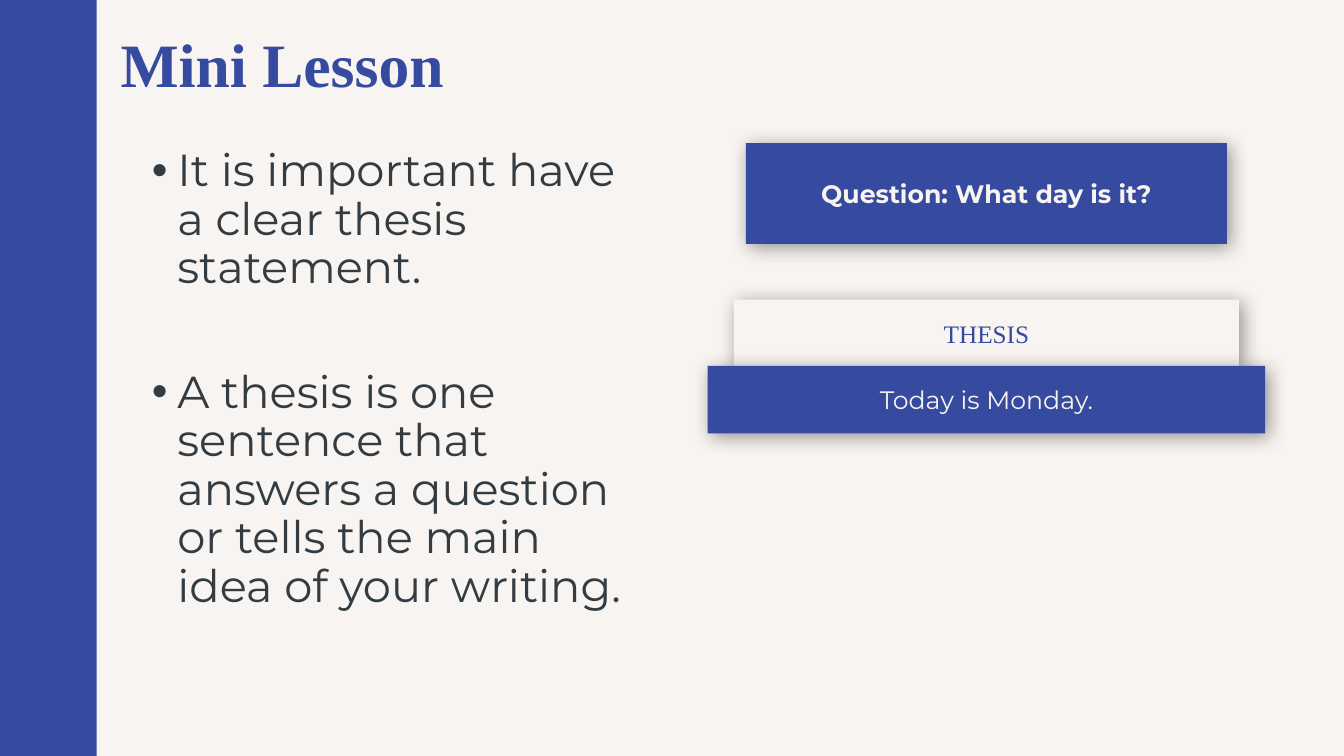
from dataclasses import dataclass

from lxml import etree
from pptx import Presentation
from pptx.dml.color import RGBColor
from pptx.enum.shapes import MSO_SHAPE
from pptx.enum.text import MSO_ANCHOR, PP_ALIGN
from pptx.oxml.ns import qn
from pptx.shapes.autoshape import Shape
from pptx.slide import Slide
from pptx.text.text import _Paragraph
from pptx.util import Cm, Pt

RECTANGLE = MSO_SHAPE.RECTANGLE
MIDDLE = MSO_ANCHOR.MIDDLE
CENTER = PP_ALIGN.CENTER

BLUE = "364B9F"
CREAM = "F7F4F1"
SLATE = "333C42"
SANS = "Montserrat"
SERIF = "Times New Roman"

SLIDE_WIDTH, SLIDE_HEIGHT = 33.87, 19.05
CARD_CENTER = 24.86
BULLET_INDENT = 0.64


@dataclass
class Card:
    text: str
    top: float
    width: float
    height: float
    fill: str
    color: str
    font: str = SANS
    bold: bool = False


CARDS = [
    Card("Question: What day is it?", 3.61, 12.12, 2.54, BLUE, CREAM, bold=True),
    Card("THESIS", 7.55, 12.73, 1.7, CREAM, BLUE, font=SERIF),
    Card("Today is Monday.", 9.22, 14.05, 1.7, BLUE, CREAM),
]
POINTS = [
    "It is important have a clear thesis statement.",
    "A thesis is one sentence that answers a question or tells the main idea of your writing.",
]


def rgb(value: str) -> RGBColor:
    return RGBColor.from_string(value)


def add_run(paragraph: _Paragraph, text: str, font: str, size: float,
            color: str, bold: bool = False) -> None:
    run = paragraph.add_run()
    run.text = text
    run.font.name = font
    run.font.size = Pt(size)
    run.font.bold = bold
    run.font.color.rgb = rgb(color)


def add_rectangle(slide: Slide, left: float, top: float, width: float,
                  height: float, fill: str) -> Shape:
    shape = slide.shapes.add_shape(RECTANGLE, Cm(left), Cm(top), Cm(width), Cm(height))
    shape.fill.solid()
    shape.fill.fore_color.rgb = rgb(fill)
    shape.line.fill.background()
    shape.shadow.inherit = False
    return shape


def add_soft_shadow(shape: Shape) -> None:
    effects = shape._element.spPr.find(qn("a:effectLst"))
    shadow = etree.SubElement(effects, qn("a:outerShdw"), blurRad=str(Pt(14)),
                              dist=str(Pt(3)), dir="2700000", algn="tl", rotWithShape="0")
    color = etree.SubElement(shadow, qn("a:srgbClr"), val="000000")
    etree.SubElement(color, qn("a:alpha"), val="40000")


def add_bullet(paragraph: _Paragraph) -> None:
    properties = paragraph._p.get_or_add_pPr()
    properties.set("marL", str(Cm(BULLET_INDENT)))
    properties.set("indent", str(-Cm(BULLET_INDENT)))
    etree.SubElement(properties, qn("a:buFont"), typeface="Arial")
    etree.SubElement(properties, qn("a:buChar"), char="•")


def add_title(slide: Slide, text: str) -> None:
    title = slide.shapes.add_textbox(Cm(2.79), Cm(0.38), Cm(30.5), Cm(2.67))
    frame = title.text_frame
    frame.word_wrap = True
    frame.vertical_anchor = MIDDLE
    paragraph = frame.paragraphs[0]
    paragraph.line_spacing = 0.9
    add_run(paragraph, text, SERIF, 44, BLUE, bold=True)


def add_points(slide: Slide, points: list[str]) -> None:
    body = slide.shapes.add_textbox(Cm(3.58), Cm(3.61), Cm(12.57), Cm(14.63))
    body.fill.solid()
    body.fill.fore_color.rgb = rgb(CREAM)
    frame = body.text_frame
    frame.word_wrap = True
    for index, point in enumerate(points):
        paragraph = frame.add_paragraph() if index else frame.paragraphs[0]
        add_bullet(paragraph)
        paragraph.line_spacing = 0.9
        paragraph.space_before = Pt(54.5 if index else 0)
        add_run(paragraph, point, SANS, 32, SLATE)


def add_card(slide: Slide, card: Card) -> None:
    left = CARD_CENTER - card.width / 2
    shape = add_rectangle(slide, left, card.top, card.width, card.height, card.fill)
    add_soft_shadow(shape)
    frame = shape.text_frame
    frame.word_wrap = True
    frame.vertical_anchor = MIDDLE
    paragraph = frame.paragraphs[0]
    paragraph.alignment = CENTER
    add_run(paragraph, card.text, card.font, 18, card.color, card.bold)


def main() -> None:
    presentation = Presentation()
    presentation.slide_width = Cm(SLIDE_WIDTH)
    presentation.slide_height = Cm(SLIDE_HEIGHT)
    slide = presentation.slides.add_slide(presentation.slide_layouts[6])
    slide.background.fill.solid()
    slide.background.fill.fore_color.rgb = rgb(CREAM)

    add_rectangle(slide, 0, 0, 2.44, SLIDE_HEIGHT, BLUE)
    add_title(slide, "Mini Lesson")
    add_points(slide, POINTS)
    for card in CARDS:
        add_card(slide, card)
    presentation.save("out.pptx")


if __name__ == "__main__":
    main()
